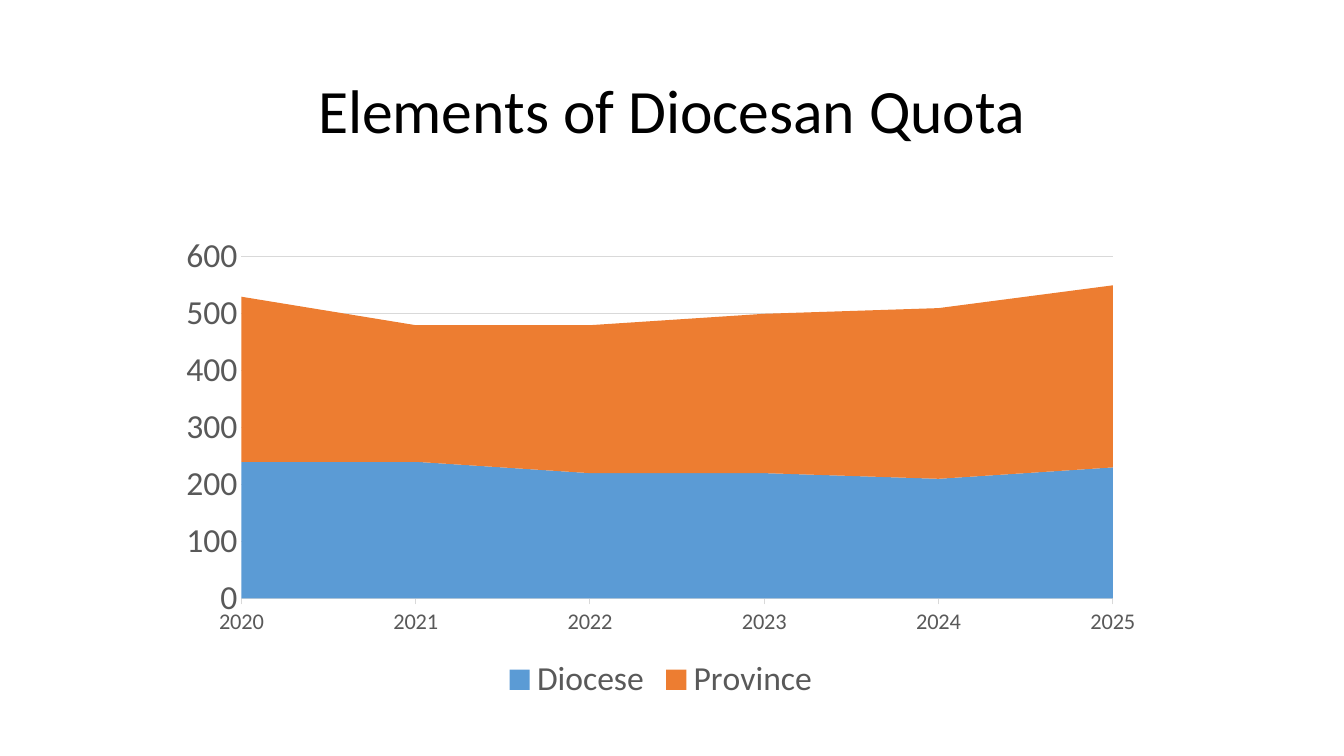
from pptx import Presentation
from pptx.chart.data import CategoryChartData
from pptx.dml.color import RGBColor
from pptx.enum.chart import XL_CHART_TYPE as ChartType, XL_LEGEND_POSITION as LegendPos, XL_TICK_MARK as Tick
from pptx.enum.text import MSO_ANCHOR as Anchor, PP_ALIGN as Align
from pptx.util import Pt

COLORS = {"title": "000000", "label": "595959", "line": "D9D9D9",
          "Diocese": "5B9BD5", "Province": "ED7D31"}
QUOTA = {"Diocese": [240, 240, 220, 220, 210, 230],
         "Province": [290, 240, 260, 280, 300, 320]}


def style_font(font, size, color):
    font.name = "Calibri"
    font.size = Pt(size)
    font.color.rgb = RGBColor.from_string(COLORS[color])


def style_line(line):
    line.color.rgb = RGBColor.from_string(COLORS["line"])
    line.width = Pt(0.75)


deck = Presentation()
deck.slide_width, deck.slide_height = Pt(960), Pt(540)
slide = deck.slides.add_slide(deck.slide_layouts[5])

# Title
title = slide.shapes.title
title.left, title.top, title.width, title.height = Pt(66), Pt(29), Pt(828), Pt(104)
title.text_frame.vertical_anchor = Anchor.MIDDLE
heading = title.text_frame.paragraphs[0]
heading.alignment = Align.CENTER
heading.line_spacing = 0.9
run = heading.add_run()
run.text = "Elements of Diocesan Quota"
style_font(run.font, 44, "title")

# Stacked area chart
quota_data = CategoryChartData()
quota_data.categories = [str(year) for year in range(2020, 2026)]
for part, amounts in QUOTA.items():
    quota_data.add_series(part, amounts)
chart = slide.shapes.add_chart(ChartType.AREA_STACKED, Pt(119), Pt(162),
                               Pt(706), Pt(343), quota_data).chart
chart.has_title = False
style_font(chart.font, 10, "title")
for area in chart.plots[0].series:
    area.format.fill.solid()
    area.format.fill.fore_color.rgb = RGBColor.from_string(COLORS[area.name])
    area.format.line.fill.background()

# Axes
years, amounts_axis = chart.category_axis, chart.value_axis
years.has_major_gridlines = False
years.major_tick_mark = Tick.OUTSIDE
style_font(years.tick_labels.font, 16, "label")
style_line(years.format.line)

amounts_axis.minimum_scale, amounts_axis.maximum_scale = 0, 600
amounts_axis.major_unit = 100
amounts_axis.has_major_gridlines = True
amounts_axis.major_tick_mark = Tick.NONE
style_font(amounts_axis.tick_labels.font, 24, "label")
amounts_axis.format.line.fill.background()
style_line(amounts_axis.major_gridlines.format.line)
for axis in (years, amounts_axis):
    axis.minor_tick_mark = Tick.NONE

# Legend
chart.has_legend = True
chart.legend.position = LegendPos.BOTTOM
chart.legend.include_in_layout = False
style_font(chart.legend.font, 24, "label")

deck.save("out.pptx")
